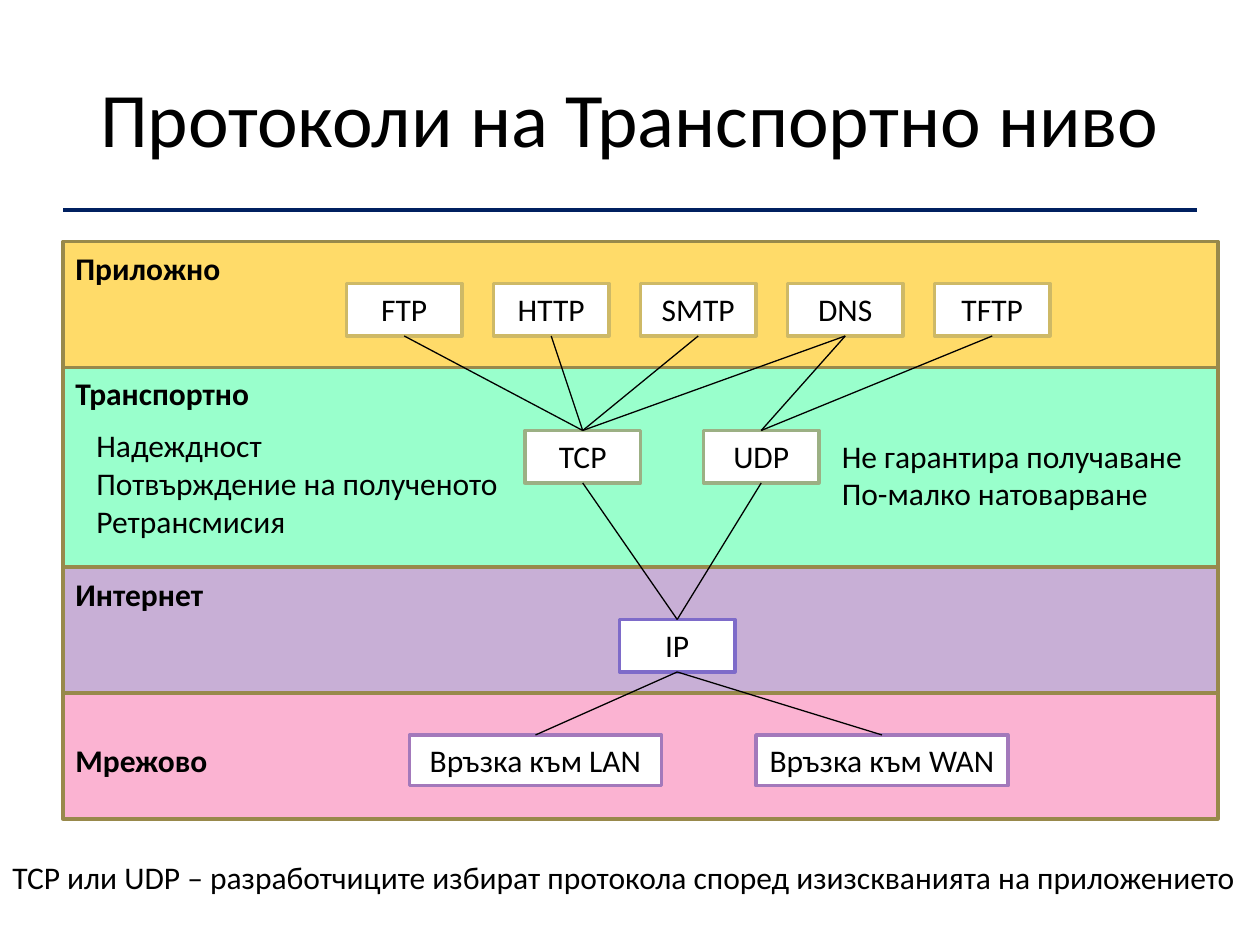
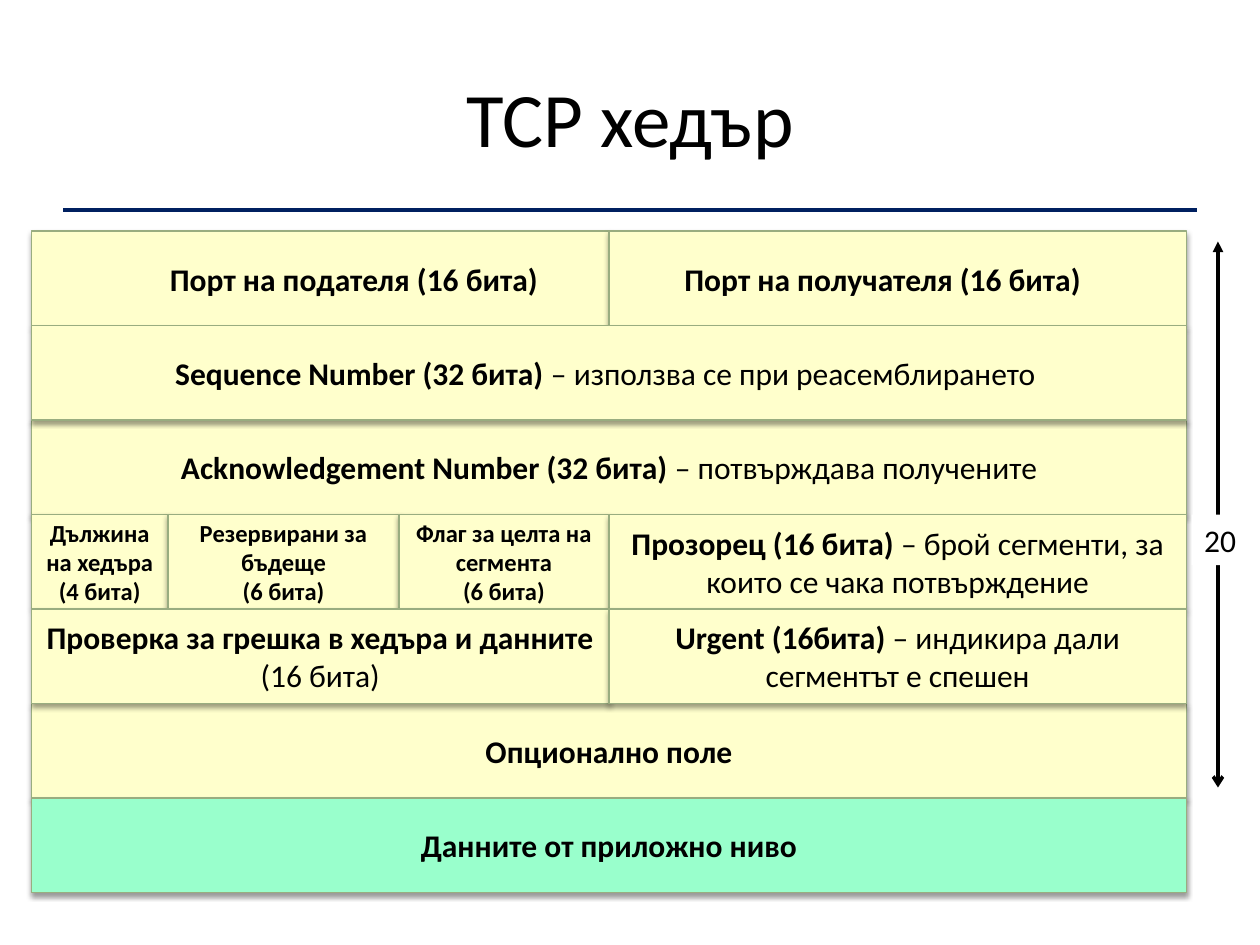
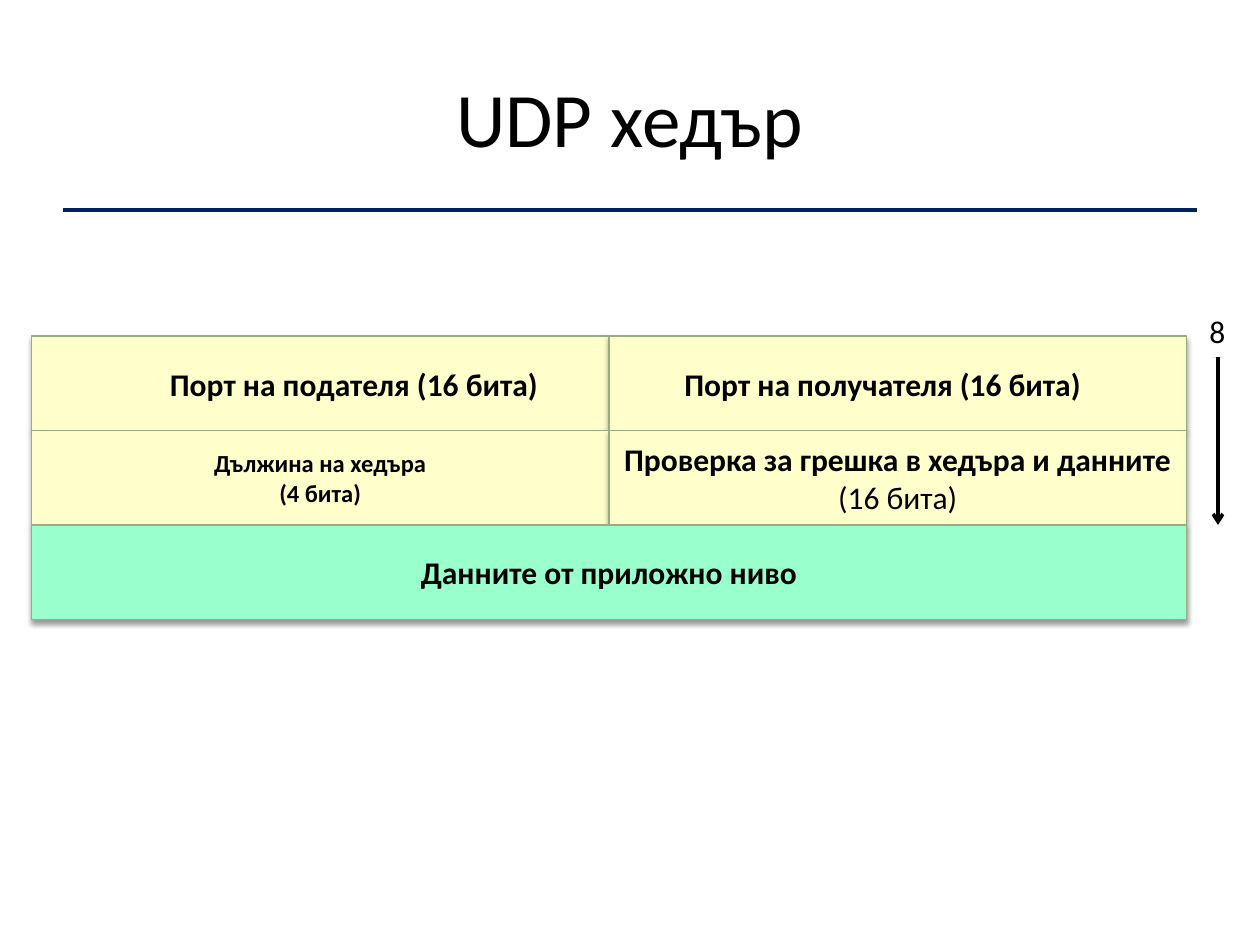
from dataclasses import dataclass

from lxml.etree import SubElement
from pptx import Presentation
from pptx.dml.color import RGBColor
from pptx.enum.shapes import MSO_CONNECTOR, MSO_SHAPE
from pptx.enum.text import MSO_ANCHOR, MSO_AUTO_SIZE, PP_ALIGN
from pptx.oxml.ns import qn
from pptx.util import Pt


@dataclass(frozen=True)
class Theme:
    font: str = "Calibri"
    title_size: int = 44
    body_size: int = 18
    small_size: int = 14
    text: str = "000000"
    white: str = "FFFFFF"
    rule: str = "002060"
    band_line: str = "98894B"
    application: str = "FFDB69"
    transport: str = "99FFCC"
    internet: str = "C8AFD6"
    network: str = "FBB3D2"
    application_line: str = "CEB966"
    transport_line: str = "9CB084"
    internet_line: str = "7E6BC9"
    network_line: str = "A379BB"
    field: str = "FFFFCC"
    field_line: str = "99AD80"


THEME = Theme()
TOP, BOTTOM = 0, 2
HEADER_LEFT, HEADER_WIDTH, ROW_HEIGHT = 18, 660, 54
HALF = HEADER_WIDTH / 2
EMPTY_PORTS = [(HALF, [], THEME.body_size)] * 2
HEADER_LENGTH = "Дължина на хедъра\n(4 бита)"
CHECKSUM = (HALF, [("Проверка за грешка в хедъра и данните\n", True), ("(16 бита)", False)],
            THEME.body_size)
PAYLOAD = (HEADER_WIDTH, [("Данните от приложно ниво", True)], THEME.body_size)


def write_text(box, paragraphs, size=THEME.body_size, align=PP_ALIGN.LEFT,
               anchor=MSO_ANCHOR.TOP, wrap=True, grow=False):
    frame = box.text_frame
    frame.word_wrap = wrap
    frame.vertical_anchor = anchor
    frame.auto_size = MSO_AUTO_SIZE.SHAPE_TO_FIT_TEXT if grow else MSO_AUTO_SIZE.NONE
    for index, spans in enumerate(paragraphs):
        para = frame.add_paragraph() if index else frame.paragraphs[0]
        para.alignment = align
        for text, bold in spans:
            for number, part in enumerate(text.split("\n")):
                if number:
                    para.add_line_break()
                if part:
                    span = para.add_run()
                    span.text = part
                    span.font.name = THEME.font
                    span.font.size = Pt(size)
                    span.font.bold = bold
                    span.font.color.rgb = RGBColor.from_string(THEME.text)


def add_label(page, left, top, width, height, *lines, bold=False, grow=True, **format):
    box = page.shapes.add_textbox(Pt(left), Pt(top), Pt(width), Pt(height))
    write_text(box, [[(line, bold)] for line in lines], grow=grow, **format)


def add_rectangle(page, left, top, width, height, fill, line=None, weight=2):
    box = page.shapes.add_shape(MSO_SHAPE.RECTANGLE, Pt(left), Pt(top), Pt(width), Pt(height))
    box.shadow.inherit = False
    box.fill.solid()
    box.fill.fore_color.rgb = RGBColor.from_string(fill)
    if line:
        box.line.color.rgb = RGBColor.from_string(line)
        box.line.width = Pt(weight)
    else:
        box.line.fill.background()
    return box


def add_line(page, start=(0, 0), end=(0, 0), color=THEME.text, weight=0.75, arrows=False):
    line = page.shapes.add_connector(MSO_CONNECTOR.STRAIGHT, *map(Pt, start + end))
    line.line.color.rgb = RGBColor.from_string(color)
    line.line.width = Pt(weight)
    properties = line._element.spPr
    if arrows:
        outline = properties.find(qn("a:ln"))
        SubElement(outline, qn("a:headEnd"), type="triangle")
        SubElement(outline, qn("a:tailEnd"), type="arrow")
    SubElement(properties, qn("a:effectLst"))
    return line


def join(page, upper, lower):
    line = add_line(page)
    line.begin_connect(upper, BOTTOM)
    line.end_connect(lower, TOP)


def add_shadow(box):
    effects = box._element.spPr.find(qn("a:effectLst"))
    shadow = SubElement(effects, qn("a:outerShdw"), blurRad=str(Pt(3.15)), dist=str(Pt(1.57)),
                        dir="5400000", rotWithShape="0")
    color = SubElement(shadow, qn("a:srgbClr"), val=THEME.text)
    SubElement(color, qn("a:alpha"), val="38000")


def add_page(deck, title):
    page = deck.slides.add_slide(deck.slide_layouts[6])
    add_line(page, (36, 120), (684, 120), THEME.rule, 2.25)
    add_label(page, 36, 21.6, 648, 90, title, size=THEME.title_size,
              align=PP_ALIGN.CENTER, anchor=MSO_ANCHOR.MIDDLE, grow=False)
    return page


def add_protocol(page, name, left, top, line, width=66, height=30):
    box = add_rectangle(page, left, top, width, height, THEME.white, line)
    write_text(box, [[(name, False)]], align=PP_ALIGN.CENTER, grow=True)
    return box


def add_header_row(page, top, fields, fill=THEME.field):
    left = HEADER_LEFT
    for width, spans, size in fields:
        box = add_rectangle(page, left, top, width, ROW_HEIGHT, fill, THEME.field_line, 0.75)
        add_shadow(box)
        write_text(box, [spans], size=size, align=PP_ALIGN.CENTER, anchor=MSO_ANCHOR.MIDDLE)
        left += width


def add_header(page, top, rows):
    for index, fields in rows:
        fill = THEME.transport if fields == [PAYLOAD] else THEME.field
        add_header_row(page, top + index * ROW_HEIGHT, fields, fill)
    add_label(page, 90, top + 13, 228, 29, "Порт на подателя (16 бита)", bold=True)
    add_label(page, 384, top + 13, 264, 29, "Порт на получателя (16 бита)", bold=True)


def add_byte_count(page, count, left, top, width, arrow_top, arrow_bottom):
    add_line(page, (696, arrow_top), (696, arrow_bottom), weight=2, arrows=True)
    box = add_rectangle(page, left, top, width, 29, THEME.white)
    write_text(box, [[(count, False)]], wrap=False, grow=True)


def build_protocols(deck):
    page = add_page(deck, "Протоколи на Транспортно ниво")
    bands = [("Приложно", 72, THEME.application, 1), ("Транспортно", 114, THEME.transport, 0),
             ("Интернет", 72, THEME.internet, 1), ("Мрежово", 72, THEME.network, 24)]
    top = 138
    for name, height, fill, offset in bands:
        add_rectangle(page, 36, top, 660, height, fill, THEME.band_line)
        add_label(page, 36, top + offset, 120, 29, name, bold=True)
        top += height

    ftp, http, smtp, dns, tftp = [
        add_protocol(page, name, 198 + 84 * index, 162, THEME.application_line)
        for index, name in enumerate(["FTP", "HTTP", "SMTP", "DNS", "TFTP"])]
    tcp = add_protocol(page, "TCP", 300, 246, THEME.transport_line)
    udp = add_protocol(page, "UDP", 402, 246, THEME.transport_line)
    internet = add_protocol(page, "IP", 354, 354, THEME.internet_line)
    lan = add_protocol(page, "Връзка към LAN", 234, 420, THEME.network_line, 144, 29)
    wan = add_protocol(page, "Връзка към WAN", 432, 420, THEME.network_line, 144, 29)
    for upper, lower in [(ftp, tcp), (http, tcp), (smtp, tcp), (dns, tcp), (dns, udp),
                         (tftp, udp), (tcp, internet), (udp, internet),
                         (internet, lan), (internet, wan)]:
        join(page, upper, lower)

    add_label(page, 48, 240, 264, 73,
              "Надеждност", "Потвърждение на полученото", "Ретрансмисия")
    add_label(page, 474, 246, 210, 51, "Не гарантира получаване", "По-малко натоварване")
    add_label(page, 0, 487, 726, 29,
              "TCP или UDP – разработчиците избират протокола според изизскванията на приложението")


def build_tcp_header(deck):
    page = add_page(deck, "TCP хедър")
    body, small = THEME.body_size, THEME.small_size
    sequence = [("Sequence Number (32 бита) ", True),
                ("– използва се при реасемблирането ", False)]
    acknowledgement = [("Acknowledgement Number (32 бита) ", True),
                       ("– потвърждава получените", False)]
    window = [("Прозорец (16 бита)", True),
              (" – брой сегменти, за които се чака потвърждение", False)]
    urgent = [("Urgent (16бита) ", True), ("– индикира дали сегментът е спешен", False)]
    control = [(78, [(HEADER_LENGTH, True)], small),
               (132, [("Резервирани за бъдеще\n(6 бита)", True)], small),
               (120, [("Флаг за целта на сегмента\n(6 бита)", True)], small),
               (HALF, window, body)]
    add_header(page, 132, [
        (0, EMPTY_PORTS),
        (2, [(HEADER_WIDTH, acknowledgement, body)]),
        (1, [(HEADER_WIDTH, sequence, body)]),
        (3, control),
        (5, [(HEADER_WIDTH, [("Опционално поле", True)], body)]),
        (4, [CHECKSUM, (HALF, urgent, body)]),
        (6, [PAYLOAD])])
    add_byte_count(page, "20", 681, 294, 33, 138, 450)


def build_udp_header(deck):
    page = add_page(deck, "UDP хедър")
    add_header(page, 192, [
        (0, EMPTY_PORTS),
        (1, [(HALF, [(HEADER_LENGTH, True)], THEME.small_size), CHECKSUM]),
        (2, [PAYLOAD])])
    add_byte_count(page, "8", 684, 175, 24, 198, 300)


def main():
    deck = Presentation()
    deck.slide_width, deck.slide_height = Pt(720), Pt(540)
    build_protocols(deck)
    build_tcp_header(deck)
    build_udp_header(deck)
    deck.save("out.pptx")


if __name__ == "__main__":
    main()
